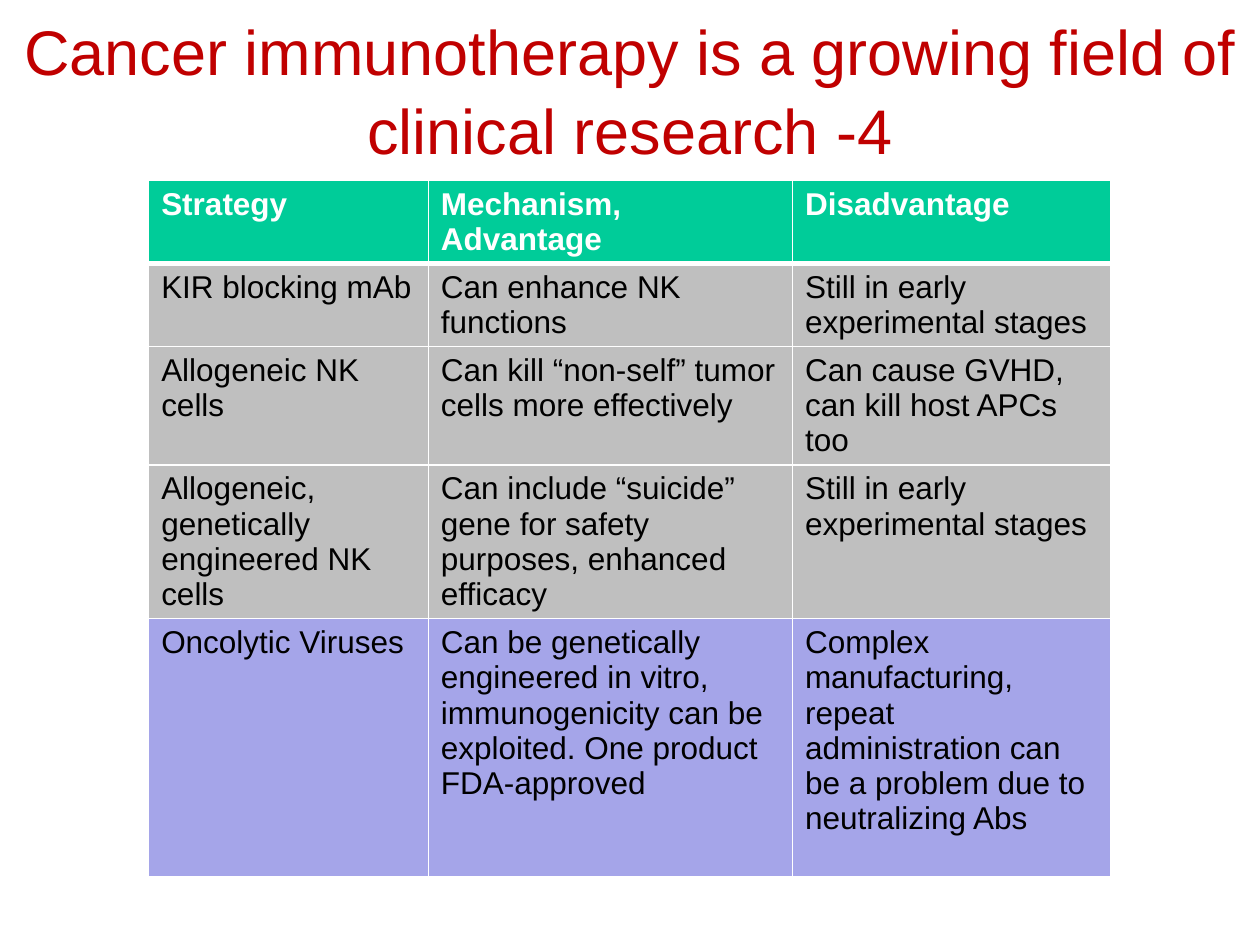
"""Build the cancer immunotherapy strategy slide."""
from dataclasses import dataclass

from lxml import etree
from pptx import Presentation
from pptx.dml.color import RGBColor
from pptx.enum import text
from pptx.oxml import ns
from pptx.util import Inches, Pt

COLORS = {
    "title": "C00000",
    "header": "00CC99",
    "cells": "BFBFBF",
    "viruses": "A5A5E9",
    "white": "FFFFFF",
    "black": "000000",
}
FONT = "Arial"
COLUMN_WIDTHS = (2.22, 2.89, 2.53)


@dataclass(frozen=True)
class Strategy:
    name: str
    advantage: str
    disadvantage: str
    height: float
    fill: str = "cells"
    is_header: bool = False


STRATEGIES = (
    Strategy("Strategy", "Mechanism, Advantage", "Disadvantage", 0.66, "header", True),
    Strategy("KIR blocking mAb", "Can enhance NK functions",
             "Still in early experimental stages", 0.66),
    Strategy("Allogeneic NK cells", "Can kill “non-self” tumor cells more effectively",
             "Can cause GVHD, can kill host APCs too", 0.94),
    Strategy("Allogeneic, genetically engineered NK cells",
             "Can include “suicide” gene for safety purposes, enhanced efficacy",
             "Still in early experimental stages", 1.22),
    Strategy("Oncolytic Viruses",
             "Can be genetically engineered in vitro, immunogenicity can be exploited. "
             "One product FDA-approved",
             "Complex manufacturing, repeat administration can be a problem "
             "due to neutralizing Abs", 2.05, "viruses"),
)


def style_font(paragraph, size: float, color: str, bold: bool = False) -> None:
    """Set the font of a whole paragraph."""
    font = paragraph.font
    font.name, font.size, font.bold = FONT, Pt(size), bold
    font.color.rgb = RGBColor.from_string(COLORS[color])


def add_border(cell, side: str, width: float) -> None:
    """Draw one white cell border, before the cell's fill is set."""
    line = etree.SubElement(cell._tc.get_or_add_tcPr(), ns.qn(f"a:{side}"), w=str(Pt(width)))
    fill = etree.SubElement(line, ns.qn("a:solidFill"))
    etree.SubElement(fill, ns.qn("a:srgbClr"), val=COLORS["white"])


def fill_cell(cell, words: str, strategy: Strategy, top: float, bottom: float) -> None:
    """Write and style one table cell."""
    cell.text = words
    for side, width in (("lnL", 1), ("lnR", 1), ("lnT", top), ("lnB", bottom)):
        add_border(cell, side, width)
    cell.fill.solid()
    cell.fill.fore_color.rgb = RGBColor.from_string(COLORS[strategy.fill])
    color = "white" if strategy.is_header else "black"
    style_font(cell.text_frame.paragraphs[0], 18, color, strategy.is_header)


def add_strategies(slide) -> None:
    """Add the table of strategies."""
    table = slide.shapes.add_table(
        len(STRATEGIES), len(COLUMN_WIDTHS), Inches(1.18), Inches(1.43),
        Inches(sum(COLUMN_WIDTHS)), Inches(sum(s.height for s in STRATEGIES))).table
    for column, width in zip(table.columns, COLUMN_WIDTHS):
        column.width = Inches(width)
    for index, (row, strategy) in enumerate(zip(table.rows, STRATEGIES)):
        row.height = Inches(strategy.height)
        top = 3 if index == 1 else 1
        bottom = 3 if strategy.is_header else 1
        entries = (strategy.name, strategy.advantage, strategy.disadvantage)
        for cell, words in zip(row.cells, entries):
            fill_cell(cell, words, strategy, top, bottom)


def add_title(slide) -> None:
    """Add the centred title across the slide."""
    frame = slide.shapes.add_textbox(0, 0, Inches(10), Inches(1.25)).text_frame
    frame.word_wrap = True
    frame.margin_top = Inches(0.07)
    title = frame.paragraphs[0]
    title.text = "Cancer immunotherapy is a growing field of clinical research -4"
    title.alignment = text.PP_ALIGN.CENTER
    title.line_spacing = 1.05
    style_font(title, 36, "title")


def main() -> None:
    """Build and save the slide."""
    deck = Presentation()
    deck.slide_width, deck.slide_height = Inches(10), Inches(7.5)
    slide = deck.slides.add_slide(deck.slide_layouts[6])
    add_strategies(slide)
    add_title(slide)
    deck.save("out.pptx")


if __name__ == "__main__":
    main()
